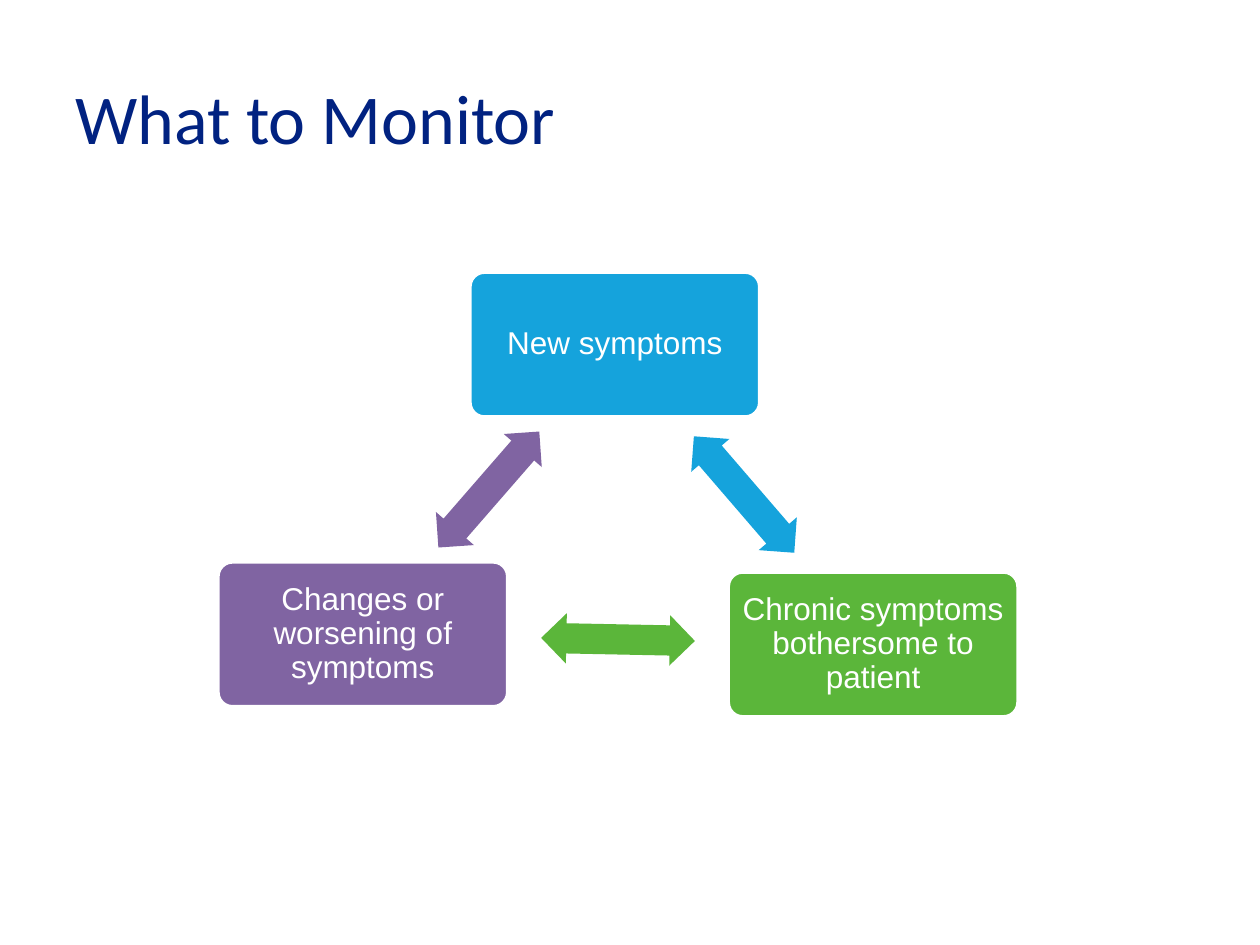
from dataclasses import dataclass
from math import atan2, degrees

from pptx import Presentation
from pptx.dml.color import RGBColor
from pptx.enum.shapes import MSO_SHAPE
from pptx.enum.text import MSO_ANCHOR, PP_ALIGN
from pptx.shapes.autoshape import Shape
from pptx.slide import Slide
from pptx.util import Inches, Pt

SLIDE_WIDTH, SLIDE_HEIGHT = Inches(10), Inches(7.5)
COLORS = {
    "title": "012281",
    "white": "FFFFFF",
    "blue": "15A3DC",
    "green": "5BB63A",
    "purple": "8064A2",
}

# Sizes in percent of the slide's width and height
NODE_SIZE = (23, 15.33)
ARROW_SIZE = (12.2, 5.33)


@dataclass(frozen=True)
class Node:
    """A labelled box, centred at percentages of the slide's size."""
    label: str
    x: float
    y: float
    color: str


NODES = [
    Node("New symptoms", 48.8, 36.47, "blue"),
    Node("Chronic symptoms bothersome to patient", 69.3, 68.2, "green"),
    Node("Changes or worsening of symptoms", 28.8, 67.13, "purple"),
]


def across(percent: float) -> int:
    return round(SLIDE_WIDTH * percent / 100)


def down(percent: float) -> int:
    return round(SLIDE_HEIGHT * percent / 100)


def rgb(name: str) -> RGBColor:
    return RGBColor.from_string(COLORS[name])


def add_centered_shape(page: Slide, kind: MSO_SHAPE, x: float, y: float,
                       size: tuple[float, float], color: str) -> Shape:
    width, height = size
    shape = page.shapes.add_shape(kind, across(x - width / 2), down(y - height / 2),
                                  across(width), down(height))
    shape.shadow.inherit = False
    shape.fill.solid()
    shape.fill.fore_color.rgb = rgb(color)
    return shape


def write(shape: Shape, text: str, font: str, size: int, color: str) -> None:
    frame = shape.text_frame
    frame.text = text
    frame.word_wrap = True
    frame.vertical_anchor = MSO_ANCHOR.MIDDLE
    span = frame.paragraphs[0].runs[0]
    span.font.name = font
    span.font.size = Pt(size)
    span.font.color.rgb = rgb(color)


def add_title(page: Slide, text: str) -> None:
    box = page.shapes.add_textbox(across(5), down(4), across(90), down(16.67))
    write(box, text, "Calibri", 40, "title")


def add_node(page: Slide, node: Node) -> None:
    box = add_centered_shape(page, MSO_SHAPE.ROUNDED_RECTANGLE,
                             node.x, node.y, NODE_SIZE, node.color)
    box.adjustments[0] = 0.1
    box.line.color.rgb = rgb("white")
    box.line.width = Pt(2)
    write(box, node.label, "Arial", 18, "white")
    frame = box.text_frame
    frame.margin_left = frame.margin_right = Inches(0.06)
    frame.margin_top = frame.margin_bottom = Inches(0.07)
    para = frame.paragraphs[0]
    para.alignment = PP_ALIGN.CENTER
    para.line_spacing = 0.9


def add_arrow(page: Slide, start: Node, end: Node) -> None:
    """Place a double arrow halfway between two nodes, turned along their line."""
    arrow = add_centered_shape(page, MSO_SHAPE.LEFT_RIGHT_ARROW,
                               (start.x + end.x) / 2, (start.y + end.y) / 2,
                               ARROW_SIZE, start.color)
    arrow.adjustments[0] = 0.6
    arrow.adjustments[1] = 0.5
    arrow.line.fill.background()
    angle = atan2(down(end.y - start.y), across(end.x - start.x))
    arrow.rotation = degrees(angle) % 360


def main() -> None:
    deck = Presentation()
    deck.slide_width, deck.slide_height = SLIDE_WIDTH, SLIDE_HEIGHT
    page = deck.slides.add_slide(deck.slide_layouts[6])
    add_title(page, "What to Monitor")
    for node, following in zip(NODES, NODES[1:] + NODES[:1]):
        add_node(page, node)
        add_arrow(page, node, following)
    deck.save("out.pptx")


if __name__ == "__main__":
    main()
